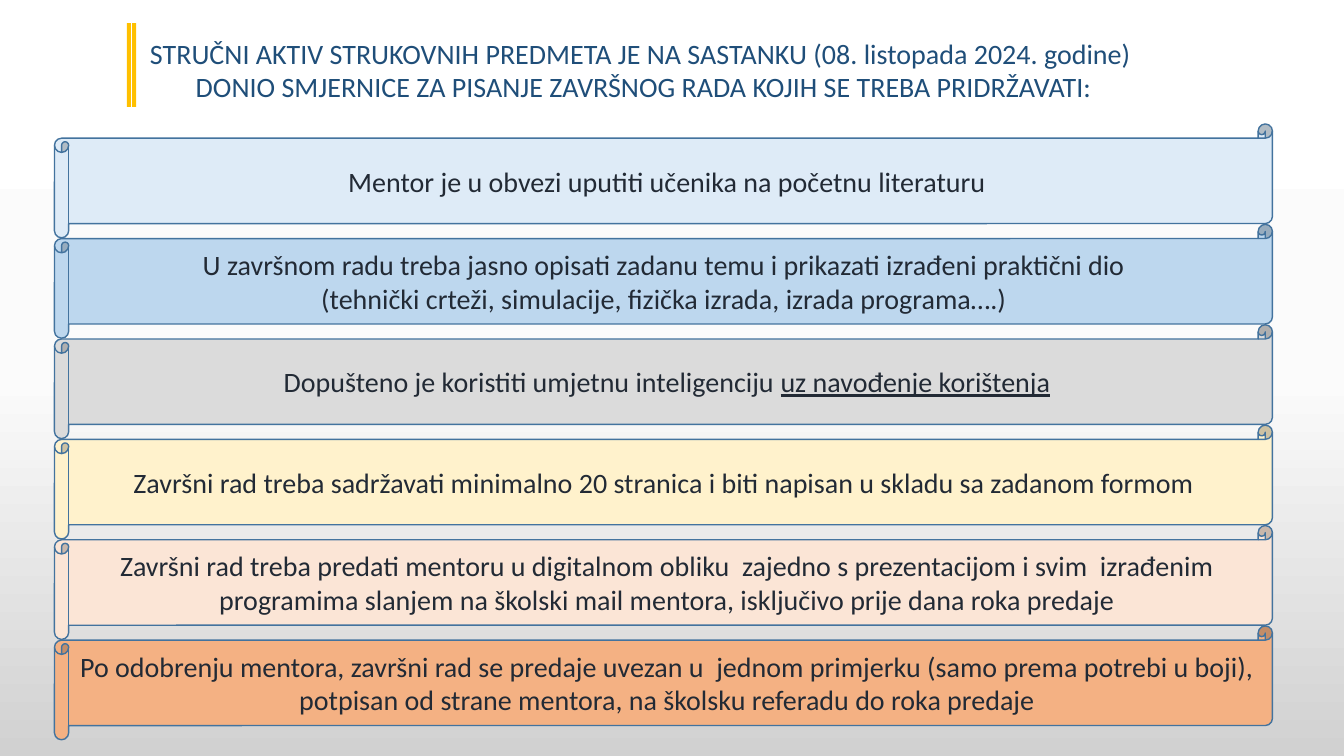
from copy import deepcopy

from pptx import Presentation
from pptx.dml.color import RGBColor
from pptx.enum.shapes import MSO_SHAPE
from pptx.enum.text import MSO_ANCHOR, MSO_AUTO_SIZE, PP_ALIGN
from pptx.oxml.ns import qn
from pptx.util import Inches, Pt

SCROLL = MSO_SHAPE.HORIZONTAL_SCROLL
RECTANGLE = MSO_SHAPE.RECTANGLE
TOP, MIDDLE = MSO_ANCHOR.TOP, MSO_ANCHOR.MIDDLE
NO_FIT = MSO_AUTO_SIZE.NONE
CENTER = PP_ALIGN.CENTER
TITLE_ONLY = 5

TITLE_LINES = [
    ["STRUČNI AKTIV STRUKOVNIH PREDMETA JE NA SASTANKU (08. listopada 2024. godine) "],
    ["DONIO SMJERNICE ZA PISANJE ZAVRŠNOG RADA KOJIH SE TREBA PRIDRŽAVATI:"],
]
GUIDELINES = [
    ("DEEBF7", [["Mentor je u obvezi uputiti učenika na početnu literaturu"]]),
    ("BDD7EE", [
        ["U završnom radu treba jasno opisati zadanu temu i prikazati izrađeni praktični dio "],
        ["(tehnički crteži, simulacije, fizička izrada, izrada programa….) "],
    ]),
    ("DBDBDB", [["Dopušteno je koristiti umjetnu inteligenciju ", "uz navođenje korištenja"]]),
    ("FFF2CC", [["Završni rad treba sadržavati minimalno 20 stranica i biti napisan u skladu sa zadanom formom "]]),
    ("FBE5D6", [["Završni rad treba predati mentoru u digitalnom obliku  zajedno s prezentacijom i svim  "
                 "izrađenim programima slanjem na školski mail mentora, isključivo prije dana roka predaje"]]),
    ("F4B183", [["Po odobrenju mentora, završni rad se predaje uvezan u  jednom primjerku (samo prema "
                 "potrebi u boji), potpisan od strane mentora, na školsku referadu do roka predaje"]]),
]


def rgb(color):
    return RGBColor.from_string(color)


def write_lines(frame, lines, color, anchor):
    frame.word_wrap = True
    frame.auto_size = NO_FIT
    frame.vertical_anchor = anchor
    for index, parts in enumerate(lines):
        paragraph = frame.add_paragraph() if index else frame.paragraphs[0]
        paragraph.alignment = CENTER
        paragraph.font.name = "Calibri"
        paragraph.font.size = Pt(20)
        paragraph.font.color.rgb = rgb(color)
        for position, part in enumerate(parts):
            run = paragraph.add_run()
            run.text = part
            if position:
                run.font.underline = True


def add_filled(slide, preset, box, color):
    shape = slide.shapes.add_shape(preset, *map(Inches, box))
    shape.shadow.inherit = False
    shape.fill.solid()
    shape.fill.fore_color.rgb = rgb(color)
    return shape


def paint_background(slide):
    fill = slide.background.fill
    fill.gradient()
    fill.gradient_angle = 270
    stops = slide.element.find(".//" + qn("a:gsLst"))
    stops.insert(1, deepcopy(stops[0]))
    for stop, (position, color) in zip(
        fill.gradient_stops, [(0, "FFFFFF"), (0.5, "FBFBFB"), (1, "D1D1D1")]
    ):
        stop.position = position
        stop.color.rgb = rgb(color)


def add_heading(slide, left, top, width, height):
    title = slide.shapes.title
    title.left, title.top = Inches(left), Inches(top)
    title.width, title.height = Inches(width), Inches(height)
    title.fill.solid()
    title.fill.fore_color.rgb = rgb("FFFFFF")
    write_lines(title.text_frame, TITLE_LINES, "1F4E79", TOP)
    for offset in (1.1, 1.15):
        bar = add_filled(slide, RECTANGLE, (left + offset, top - 0.08, 0.04, 0.83), "FFC000")
        bar.line.fill.background()


def add_guidelines(slide, left, top, width, height):
    scroll_height = 1.13
    pitch = (height - scroll_height) / (len(GUIDELINES) - 1)
    for index, (color, lines) in enumerate(GUIDELINES):
        scroll = add_filled(slide, SCROLL, (left, top + index * pitch, width, scroll_height), color)
        scroll.line.color.rgb = rgb("43739E")
        scroll.line.width = Pt(1)
        write_lines(scroll.text_frame, lines, "222A35", MIDDLE)


def main():
    presentation = Presentation()
    presentation.slide_width = Inches(13.33)
    presentation.slide_height = Inches(7.5)
    slide = presentation.slides.add_slide(presentation.slide_layouts[TITLE_ONLY])
    paint_background(slide)
    add_heading(slide, 0.16, 0.31, 12.45, 0.77)
    add_guidelines(slide, 0.54, 1.23, 12.08, 6.11)
    presentation.save("out.pptx")


if __name__ == "__main__":
    main()
